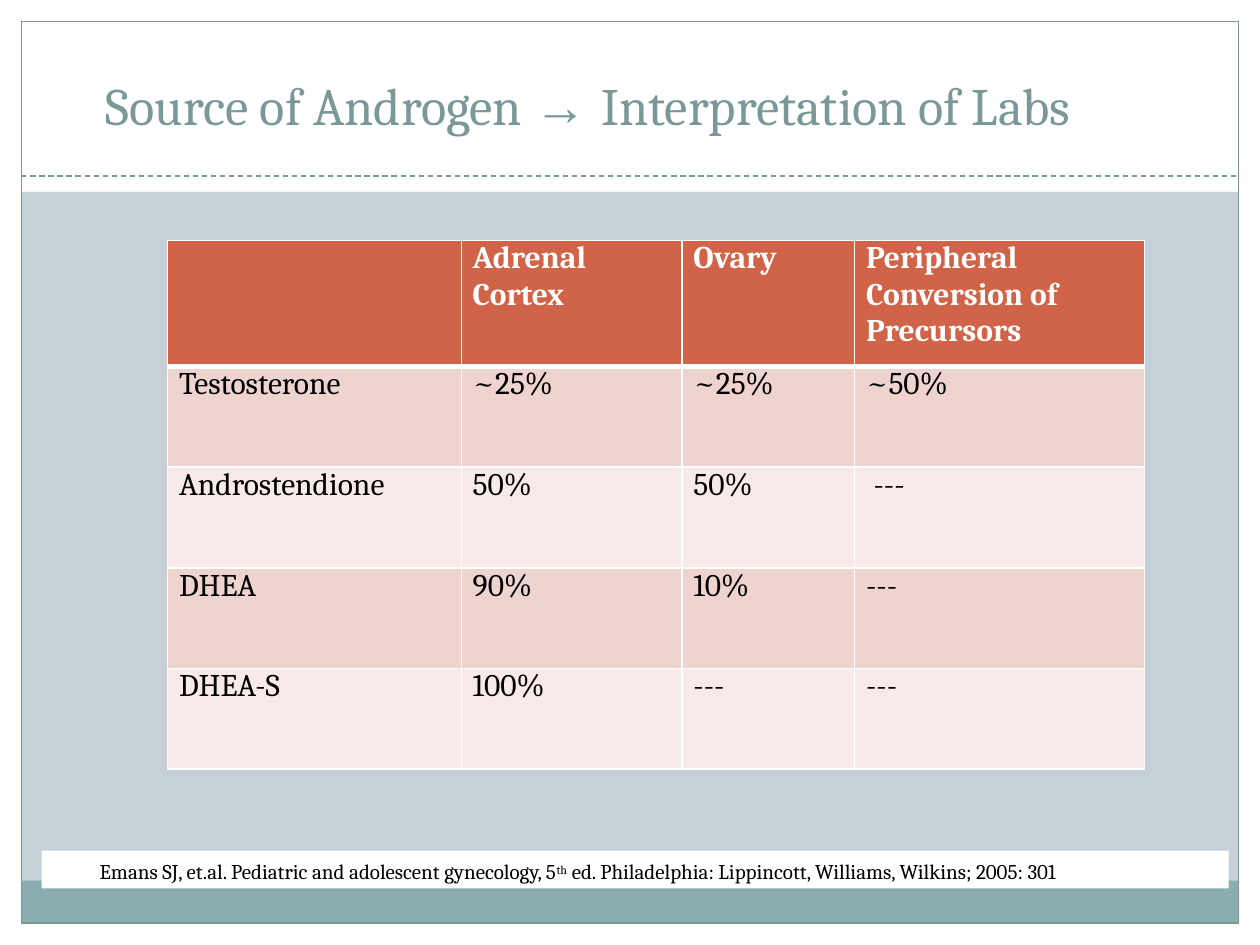
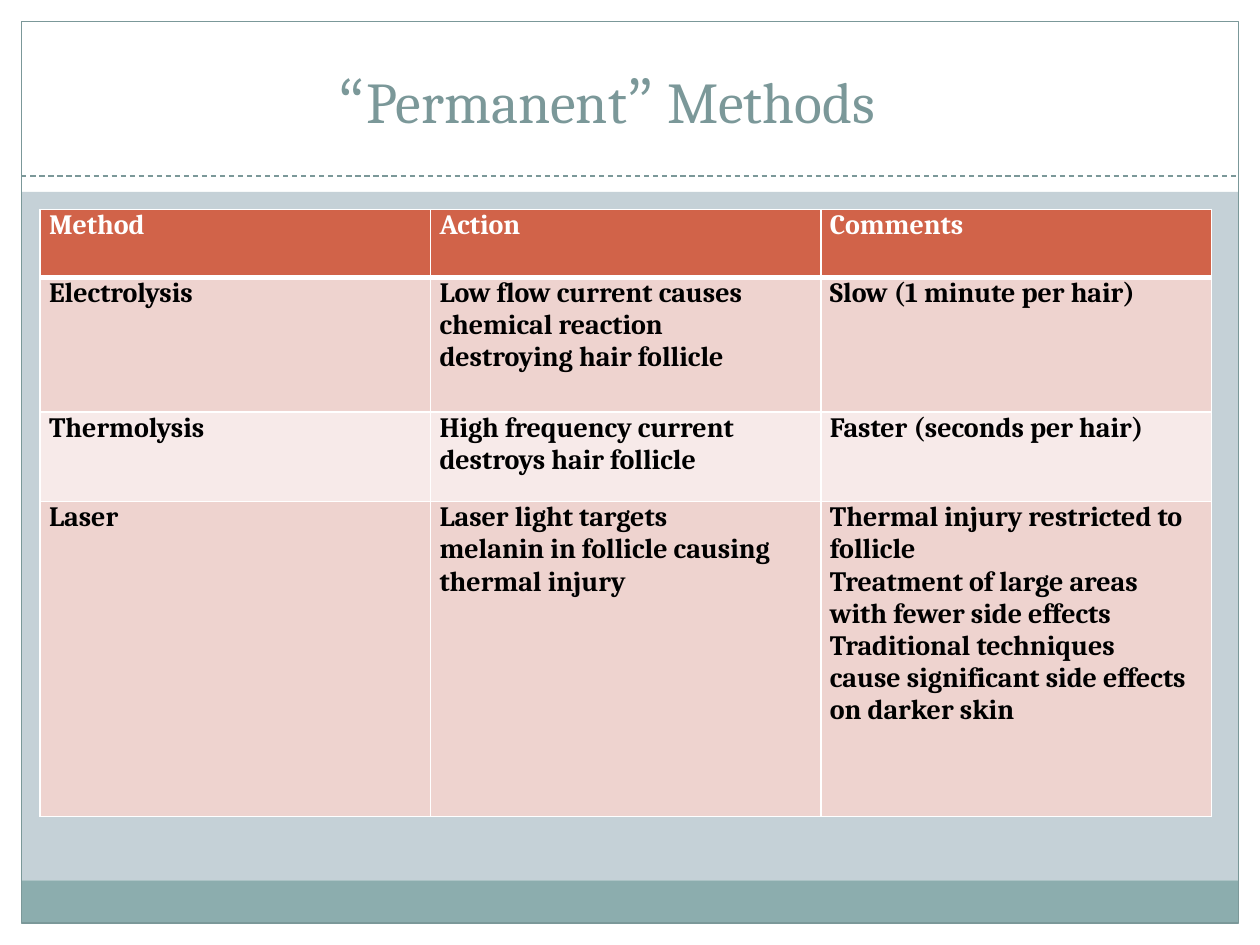
from lxml.etree import SubElement
from pptx import Presentation
from pptx.dml.color import RGBColor
from pptx.enum.dml import MSO_LINE
from pptx.enum.shapes import MSO_CONNECTOR, MSO_SHAPE
from pptx.oxml.ns import qn
from pptx.util import Cm, Pt

WHITE = RGBColor(0xFF, 0xFF, 0xFF)
BLACK = RGBColor(0x00, 0x00, 0x00)
PANEL = RGBColor(0xC5, 0xD1, 0xD7)
BAND = RGBColor(0x8C, 0xAD, 0xAE)
SLATE = RGBColor(0x7B, 0x98, 0x99)
HEADER = RGBColor(0xD1, 0x63, 0x49)
ROW_TINTS = [RGBColor(0xF7, 0xEA, 0xE9), RGBColor(0xEE, 0xD3, 0xCF)]

BODY_FONT = "Cambria"
LEFT, RIGHT = 0.43, 24.97  # edges of the slide frame, in cm


def add_text(page, left, top, width, height, spans, size, color):
    """Add a one-paragraph text box; spans are (text, font name) pairs."""
    box = page.shapes.add_textbox(Cm(left), Cm(top), Cm(width), Cm(height))
    frame = box.text_frame
    frame.word_wrap = True
    frame.margin_left = frame.margin_right = frame.margin_top = frame.margin_bottom = 0
    para = frame.paragraphs[0]
    para.font.size = Pt(size)
    para.font.color.rgb = color
    for text, font_name in spans:
        span = para.add_run()
        span.text = text
        span.font.name = font_name
    return para


def add_rectangle(page, left, top, width, height, fill=None, line=None):
    box = page.shapes.add_shape(
        MSO_SHAPE.RECTANGLE, Cm(left), Cm(top), Cm(width), Cm(height))
    box.shadow.inherit = False
    if fill is None:
        box.fill.background()
    else:
        box.fill.solid()
        box.fill.fore_color.rgb = fill
    if line is None:
        box.line.fill.background()
    else:
        box.line.color.rgb = line
        box.line.width = Pt(0.75)


androgen_sources = {
    "title": [("Source of Androgen ", BODY_FONT), ("→ ", "Arial"),
              ("Interpretation of Labs", BODY_FONT)],
    "title_size": 30, "title_left": 2.13, "title_top": 1.47,
    "left": 3.38, "top": 4.85, "size": 18, "bold_body": False, "indent": 0.23,
    "columns": [5.92, 4.45, 3.48, 5.84],
    "right_margins": [0.25] * 4,
    "row_heights": [2.54] + [2.03] * 4,
    "rows": [
        ["", "Adrenal Cortex", "Ovary", "Peripheral Conversion of Precursors"],
        ["Testosterone", "~25%", "~25%", "~50%"],
        ["Androstendione", "50%", "50%", "---"],
        ["DHEA", "90%", "10%", "---"],
        ["DHEA-S", "100%", "---", "---"],
    ],
}
permanent_methods = {
    "title": [("“", "Noto Sans CJK JP"), ("Permanent", BODY_FONT),
              ("” ", "Noto Sans CJK JP"), ("Methods", BODY_FONT)],
    "title_size": 33, "title_left": 6.83, "title_top": 1.32,
    "left": 0.81, "top": 4.22, "size": 16, "bold_body": True, "indent": 0.18,
    "columns": [7.87] * 3,
    "right_margins": [0.25, 0.92, 0.46],
    "row_heights": [1.37, 2.72, 1.8, 6.35],
    "rows": [
        ["Method", "Action", "Comments"],
        ["Electrolysis",
         "Low flow current causes chemical reaction destroying hair follicle",
         "Slow (1 minute per hair)"],
        ["Thermolysis", "High frequency current destroys hair follicle",
         "Faster (seconds per hair)"],
        ["Laser", "Laser light targets melanin in follicle causing thermal injury",
         "Thermal injury restricted to follicle\n"
         "Treatment of large areas with fewer side effects Traditional "
         "techniques cause significant side effects on darker skin"],
    ],
}

deck = Presentation()
deck.slide_width, deck.slide_height = Cm(25.4), Cm(19.05)
pages = []

for content in (androgen_sources, permanent_methods):
    page = deck.slides.add_slide(deck.slide_layouts[6])
    pages.append(page)

    # Panel, bottom band, frame and dashed rule
    add_rectangle(page, LEFT, 3.87, RIGHT - LEFT, 13.88, fill=PANEL)
    add_rectangle(page, LEFT, 17.75, RIGHT - LEFT, 0.86, fill=BAND)
    add_rectangle(page, LEFT, 0.43, RIGHT - LEFT, 18.18, line=SLATE)
    rule = page.shapes.add_connector(
        MSO_CONNECTOR.STRAIGHT, Cm(LEFT), Cm(3.55), Cm(RIGHT), Cm(3.55))
    rule.line.color.rgb = SLATE
    rule.line.width = Pt(0.75)
    rule.line.dash_style = MSO_LINE.DASH
    SubElement(rule._element.spPr, qn("a:effectLst"))

    title_left = content["title_left"]
    add_text(page, title_left, content["title_top"], 24.23 - title_left, 1.6,
             content["title"], content["title_size"], SLATE)

    rows, columns = content["rows"], content["columns"]
    heights = content["row_heights"]
    table = page.shapes.add_table(
        len(rows), len(columns), Cm(content["left"]), Cm(content["top"]),
        Cm(sum(columns)), Cm(sum(heights))).table
    for column, width in zip(table.columns, columns):
        column.width = Cm(width)
    for row_index, (texts, height) in enumerate(zip(rows, heights)):
        table.rows[row_index].height = Cm(height)
        is_header = row_index == 0
        for column_index, text in enumerate(texts):
            cell = table.cell(row_index, column_index)
            cell.margin_top = cell.margin_bottom = 0
            cell.margin_left = Cm(content["indent"])
            cell.margin_right = Cm(content["right_margins"][column_index])

            # The line under the header row is three times as thick
            widths = {"lnL": 1, "lnR": 1, "lnT": 3 if row_index == 1 else 1,
                      "lnB": 3 if is_header else 1}
            for side, points in widths.items():
                border = SubElement(cell._tc.get_or_add_tcPr(), qn("a:" + side),
                                    w=str(Pt(points)))
                paint = SubElement(border, qn("a:solidFill"))
                SubElement(paint, qn("a:srgbClr"), val=str(WHITE))

            cell.fill.solid()
            cell.fill.fore_color.rgb = HEADER if is_header else ROW_TINTS[row_index % 2]
            cell.text = text
            for para in cell.text_frame.paragraphs:
                para.font.name = BODY_FONT
                para.font.size = Pt(content["size"])
                para.font.bold = is_header or content["bold_body"]
                para.font.color.rgb = WHITE if is_header else BLACK
    if content is androgen_sources:
        table.cell(2, 3).margin_left = Cm(0.38)

# Citation strip on the androgen slide
add_rectangle(pages[0], 0.84, 17.15, 23.93, 0.76, fill=WHITE)
citation = add_text(
    pages[0], 2.01, 17.3, 21.67, 0.51,
    [("Emans SJ, et.al. Pediatric and adolescent gynecology, 5", BODY_FONT),
     ("th", BODY_FONT),
     (" ed. Philadelphia: Lippincott, Williams, Wilkins; 2005: 301", BODY_FONT)],
    12, BLACK)
citation.runs[1].font._element.set("baseline", "24000")

deck.save("out.pptx")
